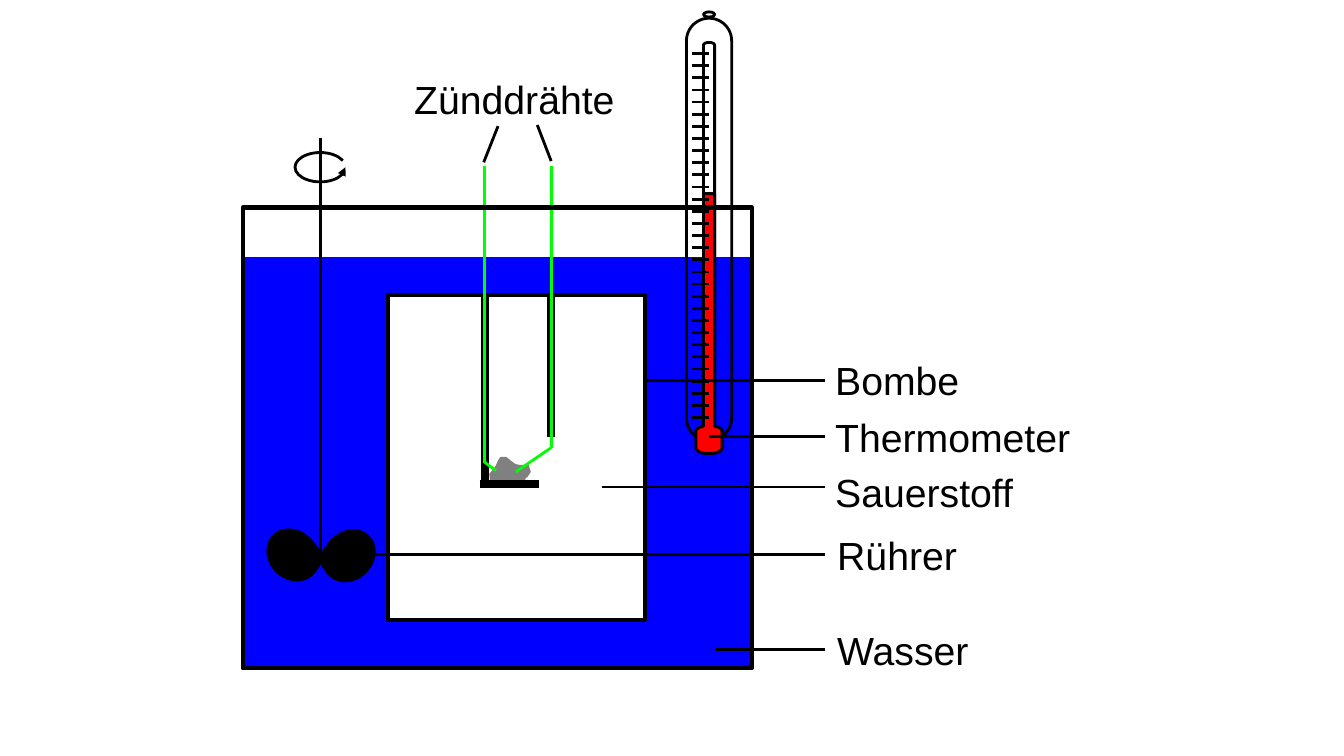
from pptx import Presentation
from pptx.dml.color import RGBColor
from pptx.enum.shapes import MSO_CONNECTOR, MSO_SHAPE
from pptx.enum.text import MSO_AUTO_SIZE
from pptx.oxml.ns import qn
from pptx.util import Cm, Pt
from lxml import etree

RECT, ROUNDED, OVAL = MSO_SHAPE.RECTANGLE, MSO_SHAPE.ROUNDED_RECTANGLE, MSO_SHAPE.OVAL
TEARDROP, ARC = MSO_SHAPE.TEAR, MSO_SHAPE.ARC
STRAIGHT = MSO_CONNECTOR.STRAIGHT
GROW = MSO_AUTO_SIZE.SHAPE_TO_FIT_TEXT

THEME = {
    "font": "Arial", "size": 28,
    "ink": "000000", "paper": "FFFFFF", "water": "0000FF",
    "mercury": "FF0000", "sample": "808080", "wire": "00FF00",
    "hair": 1, "thin": 2, "shaft": 2.5, "wall": 3, "rod": 6,
}

WATER = (6.15, 6.5, 12.78, 10.36)
BEAKER = (6.12, 5.23, 12.83, 11.61)
BOMB = (9.78, 7.44, 6.48, 8.18)
BLADES = [((6.68, 13.39, 1.4, 1.19), 45.8, False), ((8.1, 13.41, 1.4, 1.19), 314.2, True)]
SHAFT = (8.08, 3.48, 8.08, 13.97)
ROTATION = (7.7, 3.58, 0.74, 1.27)

TUBE = (17.3, 0.46, 1.14, 10.64)
CAP = (17.73, 0.3, 0.28, 0.13)
AXIS = 17.87
CAPILLARY_TOP = [((0, 1.07), (0.08, 1.07), (0.14, 1.1), (0.14, 1.14))]
MERCURY_TOP = [((0.14, 4.88),)]
BULB = [
    ((0.14, 10.74),),
    ((0.24, 10.77), (0.3, 10.8), (0.33, 10.84), (0.33, 10.87)),
    ((0.33, 11.28), (0.33, 11.38), (0.18, 11.43), (0, 11.43)),
]
TICK_COUNT, TICK_FIRST, TICK_LAST = 31, 1.35, 10.52
TICK_LEFT, TICK_RIGHT = 17.45, 17.86

RODS = [(12.22, 7.42, 12.22, 12.27), (13.89, 7.47, 13.89, 11)]
PAN = (12.09, 12.19, 13.59, 12.19)
SAMPLE = [
    (12.37, 12.14), (12.35, 11.94), (12.4, 11.89), (12.5, 11.76), (12.57, 11.61),
    (12.62, 11.53), (12.75, 11.53), (12.85, 11.61), (12.98, 11.71), (13.08, 11.73),
    (13.31, 11.73), (13.36, 11.89), (13.28, 12.01), (13.23, 12.04), (13.21, 12.14),
    (12.95, 12.17),
]
WIRES = [
    (12.22, 4.19, 12.22, 11.63), (12.19, 11.63, 12.5, 11.86),
    (13.89, 4.19, 13.89, 11.3), (13.89, 11.28, 13, 11.89),
]
WIRE_POINTERS = [(12.19, 4.09, 12.55, 3.18), (13.89, 4.06, 13.54, 3.15)]
WIRE_LABEL = ("Zünddrähte", 10.19, 1.78, 5.74)

LEADER_END, LABEL_WIDTH, LABEL_HEIGHT = 20.8, 9.22, 1.45
LABELS = [
    ("Bombe", 16.26, 9.58, 20.8, 8.86),
    ("Thermometer", 17.86, 11, 20.8, 10.29),
    ("Sauerstoff", 15.16, 12.27, 20.8, 11.68),
    ("Rührer", 8.81, 13.97, 20.85, 13.26),
    ("Wasser", 18.01, 16.36, 20.85, 15.65),
]

deck = Presentation()
deck.slide_width, deck.slide_height = Cm(33.87), Cm(19.05)
page = deck.slides.add_slide(deck.slide_layouts[6])


def color(name):
    return RGBColor.from_string(THEME[name])


def style(shape, fill, line, weight):
    shape.shadow.inherit = False
    if fill:
        shape.fill.solid()
        shape.fill.fore_color.rgb = color(fill)
    else:
        shape.fill.background()
    shape.line.color.rgb = color(line)
    shape.line.width = Pt(THEME[weight])
    return shape


def add_figure(kind, frame, fill=None, line="ink", weight="thin"):
    shape = page.shapes.add_shape(kind, *map(Cm, frame))
    return style(shape, fill, line, weight)


def add_line(ends, line="ink", weight="thin"):
    connector = page.shapes.add_connector(STRAIGHT, *map(Cm, ends))
    connector.line.color.rgb = color(line)
    connector.line.width = Pt(THEME[weight])
    etree.SubElement(connector._element.spPr, qn("a:effectLst"))


def add_outline(points, fill=None, line="ink", weight="thin"):
    places = [(Cm(x), Cm(y)) for x, y in points]
    builder = page.shapes.build_freeform(*places[0])
    builder.add_line_segments(places[1:], close=True)
    style(builder.convert_to_shape(), fill, line, weight)


def add_label(text, left, top, width):
    box = page.shapes.add_textbox(Cm(left), Cm(top), Cm(width), Cm(LABEL_HEIGHT))
    box.text_frame.word_wrap = True
    box.text_frame.auto_size = GROW
    para = box.text_frame.paragraphs[0]
    para.text = text
    para.font.name = THEME["font"]
    para.font.size = Pt(THEME["size"])
    para.font.color.rgb = color("ink")


def bend(start, first, second, end, steps=8):
    for step in range(steps + 1):
        t = step / steps
        weights = ((1 - t) ** 3, 3 * t * (1 - t) ** 2, 3 * t * t * (1 - t), t ** 3)
        yield tuple(sum(w * p[i] for w, p in zip(weights, (start, first, second, end)))
                    for i in (0, 1))


def mirrored(pieces):
    half = []
    for piece in pieces:
        half.extend(bend(*piece) if len(piece) == 4 else piece)
    right = [(AXIS + x, y) for x, y in half]
    left = [(AXIS - x, y) for x, y in reversed(half)]
    return right + left


def draw_stirrer():
    for frame, angle, flipped in BLADES:
        blade = add_figure(TEARDROP, frame, "ink", "ink", "hair")
        blade.adjustments[0] = 0.825
        blade.rotation = angle
        if flipped:
            blade._element.spPr.xfrm.set("flipH", "1")
    add_line(SHAFT, weight="shaft")


def draw_thermometer():
    add_figure(ROUNDED, TUBE).adjustments[0] = 0.5
    add_outline(mirrored(CAPILLARY_TOP + BULB))
    add_outline(mirrored(MERCURY_TOP + BULB), "mercury")
    gap = (TICK_LAST - TICK_FIRST) / (TICK_COUNT - 1)
    for index in range(TICK_COUNT):
        y = TICK_FIRST + index * gap
        add_line((TICK_LEFT, y, TICK_RIGHT, y))
    add_figure(OVAL, CAP, "paper")


def draw_ignition():
    for rod in RODS:
        add_line(rod, weight="rod")
    add_outline(SAMPLE, "sample", "sample", "hair")
    add_line(PAN, weight="rod")
    for wire in WIRES:
        add_line(wire, "wire")


def draw_rotation():
    arc = add_figure(ARC, ROTATION)
    arc.adjustments[0], arc.adjustments[1] = 162, 152.149
    arc.rotation = 90
    outline = arc._element.spPr.find(qn("a:ln"))
    etree.SubElement(outline, qn("a:headEnd"), type="triangle")


add_figure(RECT, WATER, "water", "water", "hair")
draw_stirrer()
add_figure(RECT, BOMB, "paper", weight="wall")
draw_thermometer()
draw_ignition()
draw_rotation()
add_figure(RECT, BEAKER, weight="wall")
for pointer in WIRE_POINTERS:
    add_line(pointer)
add_label(*WIRE_LABEL)
for text, start, level, left, top in LABELS:
    add_line((start, level, LEADER_END, level))
    add_label(text, left, top, LABEL_WIDTH)

deck.save("out.pptx")
